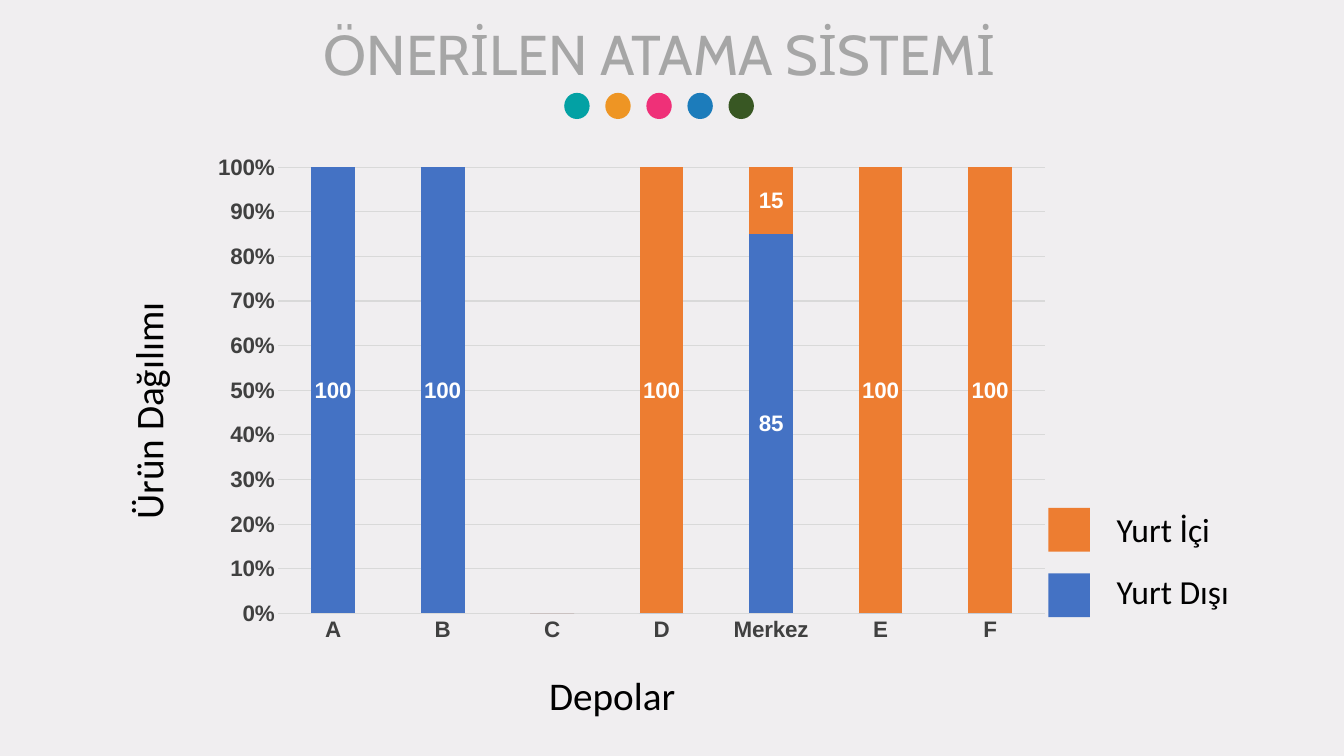
import pptx
import pptx.chart.data
import pptx.dml.color
import pptx.enum.chart
import pptx.enum.shapes
import pptx.enum.text
import pptx.oxml
import pptx.oxml.ns
import pptx.util

Cm = pptx.util.Cm
Pt = pptx.util.Pt
ABROAD, DOMESTIC = "4472C4", "ED7D31"
DEPOTS = ["A", "B", "C", "D", "Merkez", "E", "F"]
SERIES = [
    ("Yurt Dışı", ABROAD, [100, 100, 0, 0, 85, 0, 0]),
    ("Yurt İçi", DOMESTIC, [0, 0, 0, 100, 15, 100, 100]),
]
DOTS = ["03A1A4", "EE9524", "EF3078", "1C7CBB", "385723"]


def paint(fmt, color):
    """Give a fill or line format's solid fill, or a font, a hex colour."""
    if hasattr(fmt, "solid"):
        fmt.solid()
        fmt = fmt.fore_color
    else:
        fmt = fmt.color
    fmt.rgb = pptx.dml.color.RGBColor.from_string(color)


def style_font(font, size, color, name, bold=False):
    """Set the size, colour, typeface and weight of a font."""
    font.size = Pt(size)
    font.name = name
    font.bold = bold
    paint(font, color)


def write(tf, text, size=24, color="000000", name="Calibri", align="LEFT"):
    """Put one formatted paragraph into a text frame."""
    tf.word_wrap = True
    p = tf.paragraphs[0]
    p.alignment = getattr(pptx.enum.text.PP_ALIGN, align)
    r = p.add_run()
    r.text = text
    style_font(r.font, size, color, name)


def add_label(s, box, text, size, rotation=0):
    """Add a text box in the given box."""
    sp = s.shapes.add_textbox(*map(Cm, box))
    sp.rotation = rotation
    write(sp.text_frame, text, size)


def add_mark(shapes, kind, box, color):
    """Add a plain filled shape without outline."""
    sp = shapes.add_shape(getattr(pptx.enum.shapes.MSO_SHAPE, kind), *map(Cm, box))
    sp.shadow.inherit = False
    paint(sp.fill, color)
    sp.line.fill.background()


def add_title(s, box, text):
    """Place and format the title placeholder."""
    sp = s.shapes.title
    sp.left, sp.top, sp.width, sp.height = map(Cm, box)
    sp.text_frame.vertical_anchor = pptx.enum.text.MSO_ANCHOR.MIDDLE
    write(sp.text_frame, text, 40, "A6A6A6", "Cabin", "CENTER")


def add_dots(s, box):
    """Spread the coloured dots evenly over the box."""
    left, top, width, height = box
    size = 0.64
    step = (width - size) / (len(DOTS) - 1)
    group = s.shapes.add_group_shape()
    for i, color in enumerate(DOTS):
        add_mark(group.shapes, "OVAL", (left + i * step, top, size, height), color)


def style_axis(axis):
    """Give an axis its tick marks and label font."""
    none = pptx.enum.chart.XL_TICK_MARK.NONE
    axis.major_tick_mark = axis.minor_tick_mark = none
    style_font(axis.tick_labels.font, 16, "404040", "Arial", True)


def set_plot_layout(chart, x, y, w, h):
    """Fix the inner plot area as fractions of the chart."""
    area = chart.element.find(".//" + pptx.oxml.ns.qn("c:plotArea"))
    for old in area.findall(pptx.oxml.ns.qn("c:layout")):
        area.remove(old)
    sizes = "".join(f'<c:{k} val="{v}"/>' for k, v in zip("xywh", (x, y, w, h)))
    area.insert(0, pptx.oxml.parse_xml(
        f'<c:layout {pptx.oxml.ns.nsdecls("c")}><c:manualLayout>'
        '<c:layoutTarget val="inner"/><c:xMode val="edge"/><c:yMode val="edge"/>'
        f"{sizes}</c:manualLayout></c:layout>"))


def add_distribution_chart(s, box):
    """Add the stacked column chart of products per depot."""
    data = pptx.chart.data.CategoryChartData()
    data.categories = DEPOTS
    for name, _, values in SERIES:
        data.add_series(name, values)
    kind = pptx.enum.chart.XL_CHART_TYPE.COLUMN_STACKED_100
    chart = s.shapes.add_chart(kind, *map(Cm, box), data).chart
    chart.has_title = chart.has_legend = False
    style_font(chart.font, 10, "000000", "Calibri")
    set_plot_layout(chart, 0.116, 0.025, 0.88, 0.872)
    cat, val = chart.category_axis, chart.value_axis
    for axis in (cat, val):
        style_axis(axis)
    val.minimum_scale, val.maximum_scale, val.major_unit = 0, 1, 0.1
    val.tick_labels.number_format = "0%"
    val.tick_labels.number_format_is_linked = False
    val.has_major_gridlines = True
    val.format.line.fill.background()
    for line in (cat.format.line, val.major_gridlines.format.line):
        paint(line.fill, "D9D9D9")
        line.width = Pt(0.75)
    plot = chart.plots[0]
    plot.gap_width, plot.overlap, plot.vary_by_categories = 150, 100, False
    for series, (_, color, _) in zip(plot.series, SERIES):
        paint(series.format.fill, color)
        labels = series.data_labels
        labels.show_value = True
        labels.number_format = "0;;;"
        labels.number_format_is_linked = False
        labels.position = pptx.enum.chart.XL_LABEL_POSITION.CENTER
        style_font(labels.font, 16, "FFFFFF", "Arial", True)


def add_legend(s, box):
    """Stack the legend keys and names inside the box."""
    left, top, width, _ = box
    for i, (name, color, _) in enumerate(reversed(SERIES)):
        add_mark(s.shapes, "RECTANGLE", (left, top + 0.1 + i * 1.65, 1.05, 1.1), color)
        add_label(s, (left + 1.47, top + i * 1.55, width - 1.47, 1.27), name, 24)


def add_chart_slide(prs):
    """Build the slide on the proposed assignment system."""
    s = prs.slides.add_slide(prs.slide_layouts[5])
    paint(s.background.fill, "F0EEF0")
    add_distribution_chart(s, (4.47, 3.89, 21.95, 12.9))
    add_legend(s, (26.42, 12.7, 5.05, 2.82))
    add_title(s, (6.83, 0.36, 19.58, 1.96), "ÖNERİLEN ATAMA SİSTEMİ")
    add_dots(s, (14.22, 2.34, 4.78, 0.66))
    add_label(s, (13.59, 16.79, 3.76, 1.45), "Depolar", 28)
    add_label(s, (0.2, 9.09, 7.06, 1.45), "Ürün Dağılımı", 28, 270)


def main():
    """Create and save the presentation."""
    prs = pptx.Presentation()
    prs.slide_width, prs.slide_height = Cm(33.87), Cm(19.05)
    add_chart_slide(prs)
    prs.save("out.pptx")


if __name__ == "__main__":
    main()
